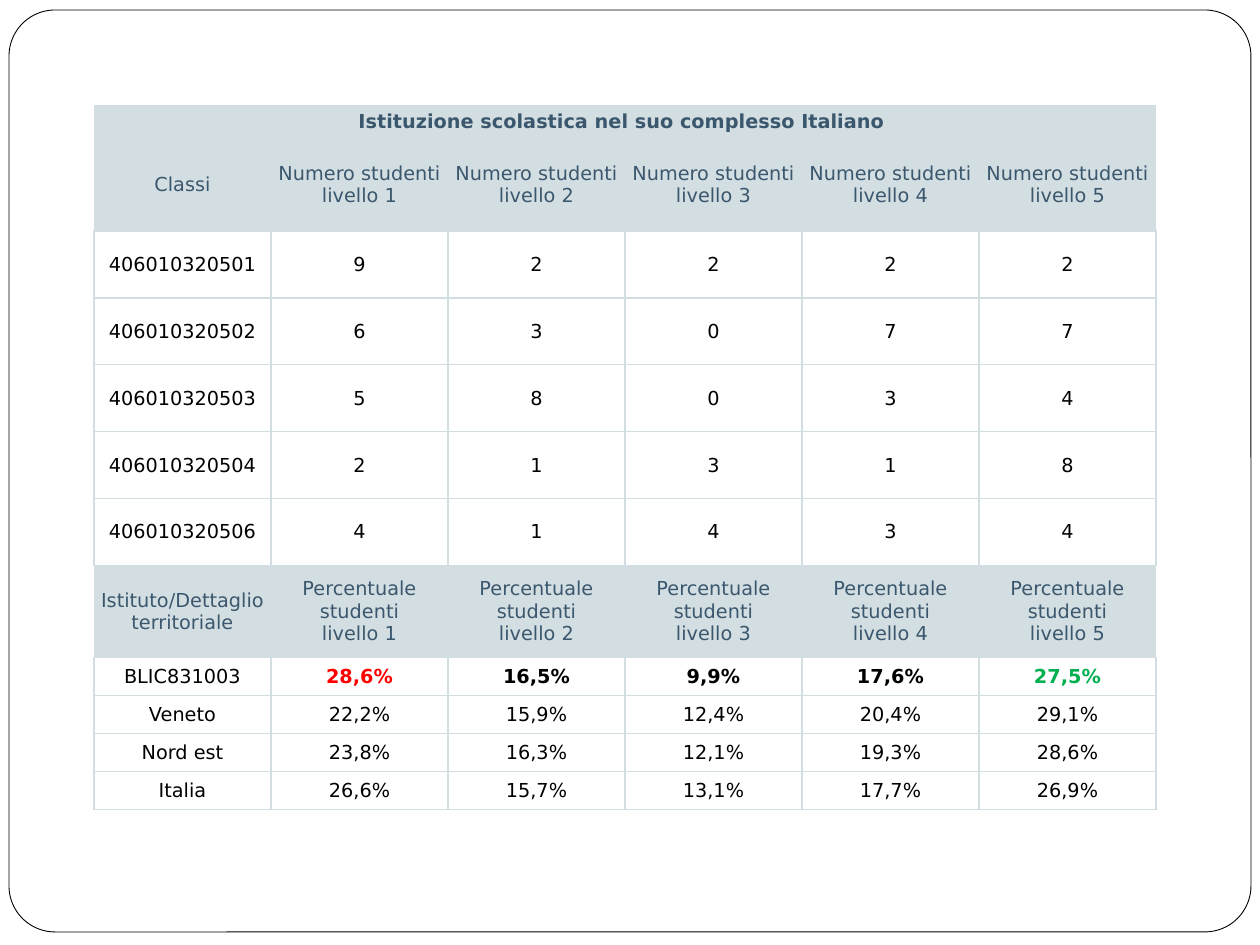
from copy import deepcopy

from lxml import etree
from pptx import Presentation
from pptx.dml.color import RGBColor
from pptx.enum.shapes import MSO_SHAPE
from pptx.enum.text import MSO_ANCHOR, PP_ALIGN
from pptx.oxml.ns import qn
from pptx.util import Emu, Pt

ROUND = MSO_SHAPE.ROUNDED_RECTANGLE
MIDDLE = MSO_ANCHOR.MIDDLE
CENTER = PP_ALIGN.CENTER

BLACK = RGBColor(0x00, 0x00, 0x00)
WHITE = RGBColor(0xFF, 0xFF, 0xFF)
MIST = RGBColor(0xD3, 0xDE, 0xE2)
SLATE = RGBColor(0x3B, 0x57, 0x6D)
RED = RGBColor(0xFF, 0x00, 0x00)
GREEN = RGBColor(0x00, 0xB0, 0x50)

FONT = "DejaVu Sans"
PX = 914400 / 126


def px(n):
    return Emu(round(n * PX))


def write(cell, text, color=BLACK, bold=False, fill=WHITE, pad=4, sides="LRTB"):
    """Fill one cell with centred text and draw its borders on the given sides."""
    cell.fill.solid()
    cell.fill.fore_color.rgb = fill
    cell.vertical_anchor = MIDDLE
    cell.margin_left = cell.margin_right = px(pad)
    cell.margin_top = cell.margin_bottom = px(pad)
    par = cell.text_frame.paragraphs[0]
    par.text = text
    par.alignment = CENTER
    for run in par.runs:
        run.font.name = FONT
        run.font.size = Pt(11)
        run.font.bold = bold
        run.font.color.rgb = color
    # Line breaks carry the size of the text around them
    for br in par._p.findall(qn("a:br")):
        br.append(deepcopy(par.runs[0]._r.rPr))
    props = cell._tc.get_or_add_tcPr()
    for i, side in enumerate("LRTB"):
        line = etree.Element(qn("a:ln" + side), w=str(Pt(0.75)))
        if side in sides:
            solid = etree.SubElement(line, qn("a:solidFill"))
            etree.SubElement(solid, qn("a:srgbClr"), val=str(MIST))
        else:
            etree.SubElement(line, qn("a:noFill"))
        props.insert(i, line)


prs = Presentation()
prs.slide_width = px(1260)
prs.slide_height = px(945)
slide = prs.slides.add_slide(prs.slide_layouts[6])

frame = slide.shapes.add_shape(ROUND, px(9), px(10), px(1242), px(922))
frame.adjustments[0] = 0.05
frame.shadow.inherit = False
frame.fill.solid()
frame.fill.fore_color.rgb = WHITE
frame.line.color.rgb = BLACK
frame.line.width = Pt(0.5)

levels = range(1, 6)
counts = [
    ["406010320501", "9", "2", "2", "2", "2"],
    ["406010320502", "6", "3", "0", "7", "7"],
    ["406010320503", "5", "8", "0", "3", "4"],
    ["406010320504", "2", "1", "3", "1", "8"],
    ["406010320506", "4", "1", "4", "3", "4"],
]
shares = [
    ["BLIC831003", "28,6%", "16,5%", "9,9%", "17,6%", "27,5%"],
    ["Veneto", "22,2%", "15,9%", "12,4%", "20,4%", "29,1%"],
    ["Nord est", "23,8%", "16,3%", "12,1%", "19,3%", "28,6%"],
    ["Italia", "26,6%", "15,7%", "13,1%", "17,7%", "26,9%"],
]
heads = {
    1: ["Classi"] + [f"Numero studenti\nlivello {n}" for n in levels],
    7: ["Istituto/Dettaglio territoriale"]
    + [f"Percentuale studenti\nlivello {n}" for n in levels],
}
rows = [heads[1], *counts, heads[7], *shares]
highs = [34, 92] + [67] * 5 + [92] + [38] * 4

table = slide.shapes.add_table(
    len(highs), 6, px(94), px(105), px(177 * 6), px(sum(highs))
).table
for col in table.columns:
    col.width = px(177)
for row, high in zip(table.rows, highs):
    row.height = px(high)

table.cell(0, 0).merge(table.cell(0, 5))
write(table.cell(0, 0), "Istituzione scolastica nel suo complesso Italiano ",
      color=SLATE, bold=True, fill=MIST, pad=2, sides="")

tints = {(8, 1): RED, (8, 5): GREEN}
for r, row in enumerate(rows, start=1):
    for c, text in enumerate(row):
        cell = table.cell(r, c)
        if r in heads:
            write(cell, text, color=SLATE, fill=MIST, pad=2,
                  sides="B" if r == 1 else "TB")
        else:
            write(cell, text, color=tints.get((r, c), BLACK),
                  bold=r == 8 and c > 0)

prs.save("out.pptx")
